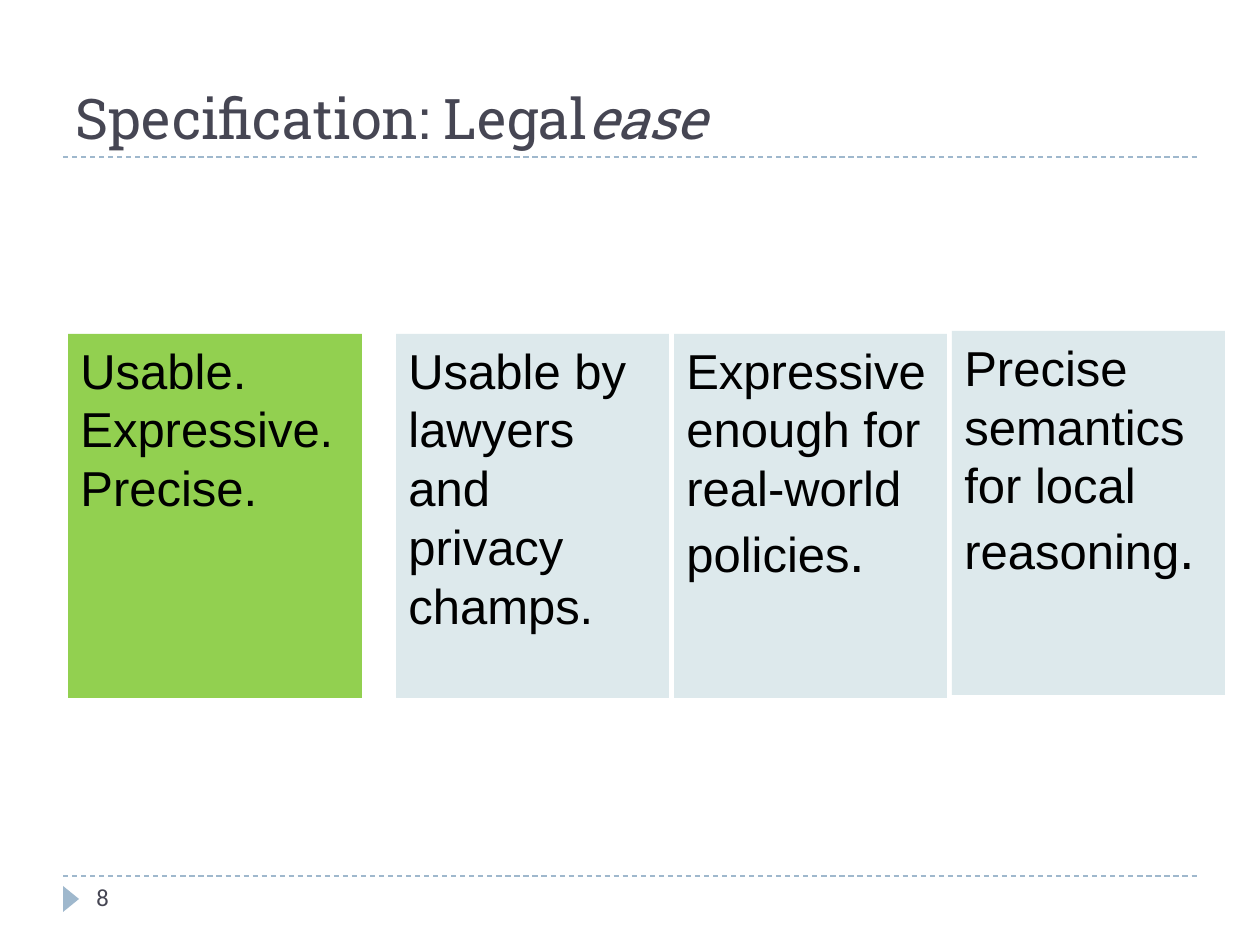
from lxml.etree import SubElement
from pptx import Presentation
from pptx.dml.color import RGBColor
from pptx.enum.dml import MSO_LINE
from pptx.enum.shapes import MSO_CONNECTOR, MSO_SHAPE
from pptx.enum.text import MSO_ANCHOR, PP_ALIGN
from pptx.oxml.ns import qn
from pptx.util import Emu, Pt

SCALE = 914400 / 126
INK, BLUE, PALE, GREEN = "464653", "9FB8CD", "DDE9EC", "92D050"


def px(*values):
    """Turn px lengths into EMU."""
    return [Emu(round(v * SCALE)) for v in values]


def color(value):
    """Return the colour of a hex string."""
    return RGBColor.from_string(value)


def write(shape, paragraphs, font="Arial", size=28, ink="000000", anchor=MSO_ANCHOR.TOP):
    """Fill a shape with paragraphs, each a list of (text, format) runs."""
    tf = shape.text_frame
    tf.word_wrap = True
    tf.vertical_anchor = anchor
    for i, runs in enumerate(paragraphs):
        p = tf.paragraphs[0] if i == 0 else tf.add_paragraph()
        p.alignment = PP_ALIGN.LEFT
        for text, fmt in runs:
            r = p.add_run()
            r.text = text
            r.font.name = font
            r.font.size = Pt(fmt.get("size", size))
            r.font.italic = fmt.get("italic")
            r.font.color.rgb = color(ink)


def add_text(s, box, paragraphs, **fmt):
    """Add a text box."""
    write(s.shapes.add_textbox(*px(*box)), paragraphs, **fmt)


def add_block(s, kind, box, fill):
    """Add a filled shape without outline."""
    sp = s.shapes.add_shape(kind, *px(*box))
    sp.shadow.inherit = False
    sp.fill.solid()
    sp.fill.fore_color.rgb = color(fill)
    sp.line.fill.background()
    return sp


def add_rule(s, y):
    """Add a dashed horizontal rule."""
    line = s.shapes.add_connector(MSO_CONNECTOR.STRAIGHT, *px(63, y, 1197, y))
    line.line.color.rgb = color(BLUE)
    line.line.width = Pt(0.75)
    line.line.dash_style = MSO_LINE.DASH
    SubElement(line._element.spPr, qn("a:effectLst"))


def main():
    """Build the slide."""
    prs = Presentation()
    prs.slide_width, prs.slide_height = px(1260, 945)
    s = prs.slides.add_slide(prs.slide_layouts[6])

    for y in (876, 157):
        add_rule(s, y)
    add_block(s, MSO_SHAPE.ISOSCELES_TRIANGLE, (58, 891, 26, 16), BLUE).rotation = 90
    add_text(s, (63, 31, 1134, 126),
             [[("Specification: Legal", {}), ("ease", {"italic": True})]],
             font="Roboto Slab", size=32, ink=INK, anchor=MSO_ANCHOR.BOTTOM)

    big_stop = (".", {"size": 32})
    goals = [
        (334, [("Usable by lawyers and privacy champs.", {})]),
        (334, [("Expressive enough for real-world policies", {}), big_stop]),
        (331, [("Precise semantics for local reasoning", {}), big_stop]),
    ]
    for i, (top, runs) in enumerate(goals):
        write(add_block(s, MSO_SHAPE.RECTANGLE, (396 + 278 * i, top, 273, 364), PALE), [runs])

    summary = add_block(s, MSO_SHAPE.RECTANGLE, (68, 334, 294, 364), GREEN)
    write(summary, [[(word, {})] for word in ("Usable.", "Expressive.", "Precise.")])
    add_text(s, (84, 876, 273, 50), [[("8", {})]], font="Calibri", size=14, ink=INK)
    prs.save("out.pptx")


if __name__ == "__main__":
    main()
